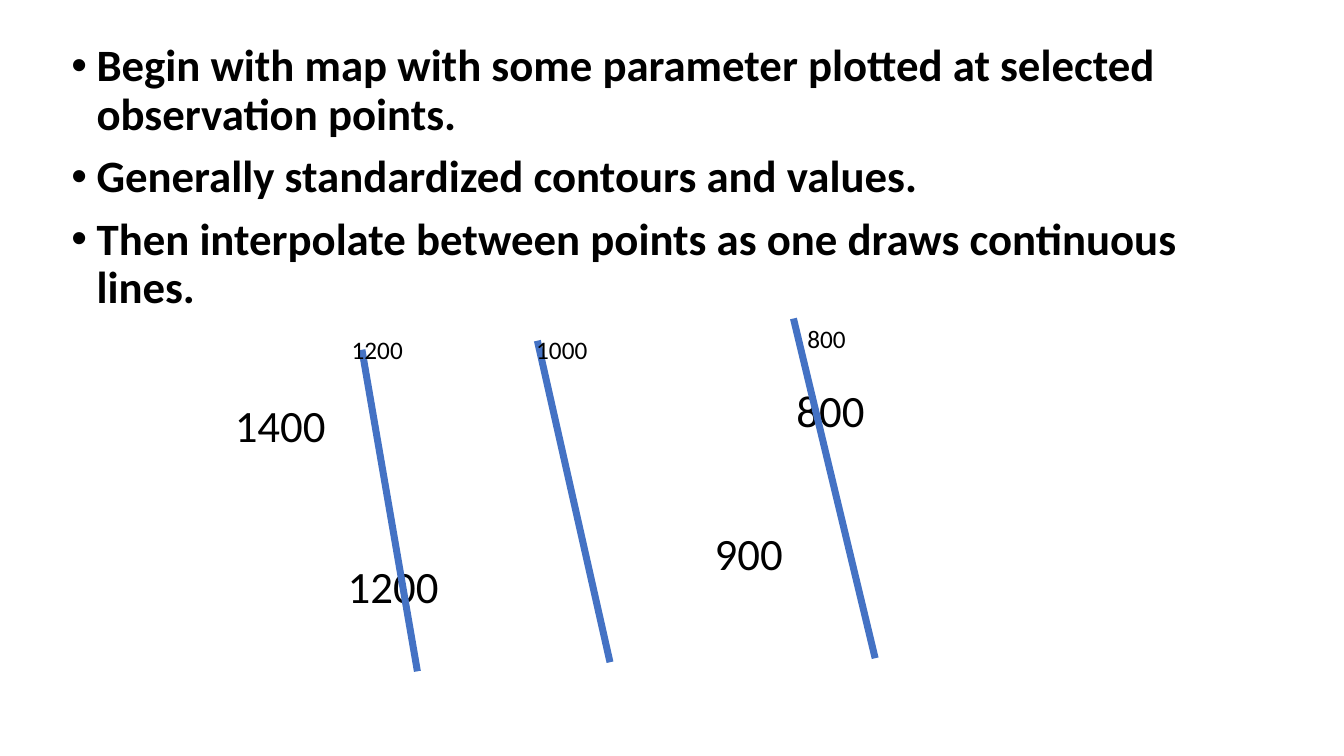
from dataclasses import dataclass

from lxml.etree import SubElement
from pptx import Presentation
from pptx.dml.color import RGBColor
from pptx.enum.shapes import MSO_CONNECTOR
from pptx.enum.text import MSO_ANCHOR, MSO_AUTO_SIZE
from pptx.oxml.ns import qn
from pptx.util import Inches, Pt


@dataclass(frozen=True)
class Theme:
    font: str = "Calibri"
    ink: RGBColor = RGBColor(0, 0, 0)
    paper: RGBColor = RGBColor(255, 255, 255)
    contour: RGBColor = RGBColor(0x44, 0x72, 0xC4)
    contour_width: float = 5
    large: int = 32
    small: int = 18


THEME = Theme()

STEPS = (
    "Begin with map with some parameter plotted at selected observation points.",
    "Generally standardized contours and values.",
    "Then interpolate between points as one draws continuous lines.",
)
OBSERVATIONS = (
    ("1400", 0, 0.74, 1.11),
    ("800", 5.57, 0.59, 0.89),
    ("1200", 1.12, 2.33, 1.11),
    ("900", 4.76, 2.01, 0.89),
)
CONTOURS = (
    (3.1, 0.22, 3.82, 3.41),
    (1.36, 0.31, 1.91, 3.5),
    (5.64, 0, 6.45, 3.37),
)
CONTOUR_LABELS = (
    ("1200", 1.16, 0.11, 0.71),
    ("1000", 2.99, 0.11, 0.71),
    ("800", 5.68, 0, 0.59),
)


def add_span(para, text, size, bold=False):
    span = para.add_run()
    span.text = text
    span.font.name = THEME.font
    span.font.size = Pt(size)
    span.font.bold = bold
    span.font.color.rgb = THEME.ink


def add_bullet(para):
    properties = para._p.get_or_add_pPr()
    properties.set("marL", str(Inches(0.25)))
    properties.set("indent", str(Inches(-0.25)))
    SubElement(properties, qn("a:buFont"), typeface="Arial")
    SubElement(properties, qn("a:buChar"), char="•")


def add_steps(page, left, top, width, height):
    box = page.shapes.add_textbox(
        Inches(left), Inches(top), Inches(width), Inches(height))
    frame = box.text_frame
    frame.word_wrap = True
    frame.vertical_anchor = MSO_ANCHOR.TOP
    for index, step in enumerate(STEPS):
        para = frame.add_paragraph() if index else frame.paragraphs[0]
        para.line_spacing = 0.9
        para.space_before = Pt(10)
        add_bullet(para)
        add_span(para, step, THEME.large, bold=True)


def add_value(page, text, left, top, width, height, size):
    box = page.shapes.add_textbox(
        Inches(left), Inches(top), Inches(width), Inches(height))
    box.text_frame.word_wrap = False
    box.text_frame.auto_size = MSO_AUTO_SIZE.SHAPE_TO_FIT_TEXT
    add_span(box.text_frame.paragraphs[0], text, size)


def add_contour(page, start_x, start_y, end_x, end_y):
    contour = page.shapes.add_connector(
        MSO_CONNECTOR.STRAIGHT,
        Inches(start_x), Inches(start_y), Inches(end_x), Inches(end_y))
    contour.line.color.rgb = THEME.contour
    contour.line.width = Pt(THEME.contour_width)
    SubElement(contour._element.spPr, qn("a:effectLst"))


def add_contour_map(page, left, top):
    for text, x, y, width in OBSERVATIONS:
        add_value(page, text, left + x, top + y, width, 0.64, THEME.large)
    for start_x, start_y, end_x, end_y in CONTOURS:
        add_contour(page, left + start_x, top + start_y, left + end_x, top + end_y)
    for text, x, y, width in CONTOUR_LABELS:
        add_value(page, text, left + x, top + y, width, 0.4, THEME.small)


def main():
    deck = Presentation()
    deck.slide_width = Inches(13.33)
    deck.slide_height = Inches(7.5)
    page = deck.slides.add_slide(deck.slide_layouts[6])
    page.background.fill.solid()
    page.background.fill.fore_color.rgb = THEME.paper
    add_steps(page, 0.61, 0.38, 11.66, 2.24)
    add_contour_map(page, 2.23, 3.16)
    deck.save("out.pptx")


if __name__ == "__main__":
    main()
